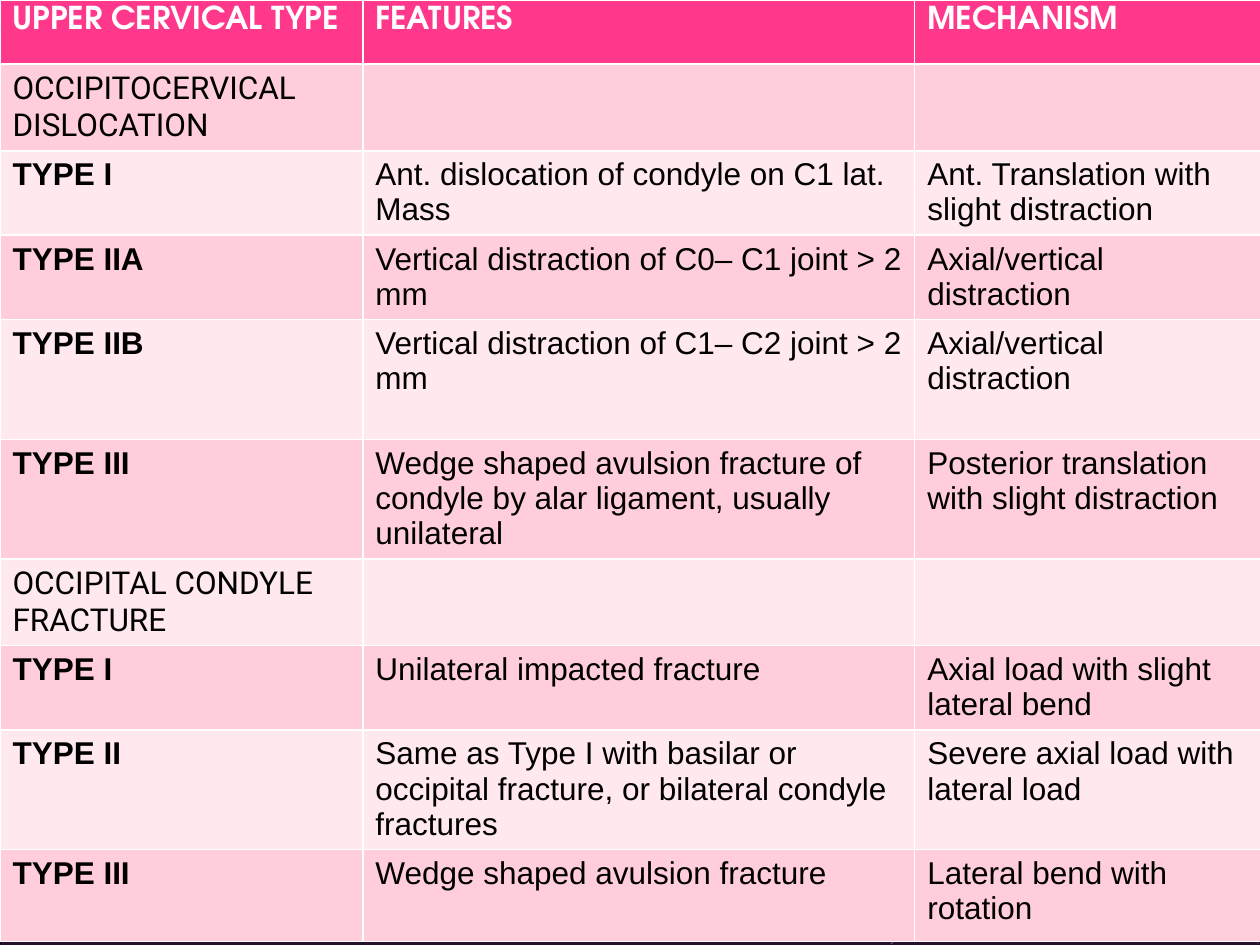
from typing import NamedTuple

from lxml.etree import SubElement
from pptx import Presentation
from pptx.dml.color import RGBColor
from pptx.enum.shapes import MSO_CONNECTOR, MSO_SHAPE
from pptx.oxml.ns import qn
from pptx.util import Pt


class Row(NamedTuple):
    height: float
    label: str
    features: str = ""
    mechanism: str = ""


class Line(NamedTuple):
    start: tuple[float, float]
    end: tuple[float, float]
    width: float
    color: str
    opacity: int


BACKGROUND = "1C0022"
HEADER_FILL = "FF388C"
BAND_FILLS = ("FFE8EE", "FFCEDA")
TWO_LINES, THREE_LINES = 48.24, 68.4
COLUMN_WIDTHS = (207.36, 315.36, 225.36)

HEADER_FORMAT = {"name": "TeX Gyre Adventor", "size": Pt(18), "bold": True}
GROUP_FORMAT = {"name": "Roboto", "size": Pt(18), "bold": False}
LABEL_FORMAT = {"name": "Arial", "size": Pt(18), "bold": True}
BODY_FORMAT = {"name": "Arial", "size": Pt(18), "bold": False}

DECOR_LINES = (
    Line((0, 0.72), (719.28, 539.28), 0.39, "BFBFBF", 35),
    Line((720, 389.52), (509.04, 539.28), 0.47, "C6C6C6", 45),
)

ROWS = (
    Row(36.72, "UPPER CERVICAL TYPE", "FEATURES", "MECHANISM"),
    Row(TWO_LINES, "OCCIPITOCERVICAL DISLOCATION"),
    Row(TWO_LINES, "TYPE I", "Ant. dislocation of condyle on C1 lat. Mass",
        "Ant. Translation with\nslight distraction"),
    Row(TWO_LINES, "TYPE IIA", "Vertical distraction of C0– C1 joint > 2 mm",
        "Axial/vertical\ndistraction"),
    Row(THREE_LINES, "TYPE IIB", "Vertical distraction of C1– C2 joint > 2 mm",
        "Axial/vertical\ndistraction"),
    Row(THREE_LINES, "TYPE III",
        "Wedge shaped avulsion fracture of condyle by alar ligament, usually unilateral",
        "Posterior translation\nwith slight distraction"),
    Row(TWO_LINES, "OCCIPITAL CONDYLE FRACTURE"),
    Row(TWO_LINES, "TYPE I", "Unilateral impacted fracture",
        "Axial load with slight lateral bend"),
    Row(THREE_LINES, "TYPE II",
        "Same as Type I with basilar or occipital fracture, or bilateral condyle fractures",
        "Severe axial load with lateral load"),
    Row(52.56, "TYPE III", "Wedge shaped avulsion fracture",
        "Lateral bend with\nrotation"),
)


def paint(fill, color: str, opacity: int = 100) -> None:
    """Give a fill a solid colour, see-through below 100 percent."""
    fill.solid()
    fill.fore_color.rgb = RGBColor.from_string(color)
    if opacity < 100:
        color_element = fill._xPr.find(qn("a:solidFill"))[0]
        SubElement(color_element, qn("a:alpha")).set("val", str(opacity * 1000))


def draw_line(slide, line: Line) -> None:
    points = [Pt(value) for value in (*line.start, *line.end)]
    connector = slide.shapes.add_connector(MSO_CONNECTOR.STRAIGHT, *points)
    connector.line.width = Pt(line.width)
    paint(connector.line.fill, line.color, line.opacity)
    SubElement(connector._element.spPr, qn("a:effectLst"))


def draw_triangle(slide) -> None:
    triangle = slide.shapes.add_shape(
        MSO_SHAPE.RIGHT_TRIANGLE, Pt(0.72), Pt(1.44), Pt(718.56), Pt(538.56))
    triangle.shadow.inherit = False
    triangle.line.fill.background()
    paint(triangle.fill, "D2D2D2", 8)


def write_cell(cell, text: str, fill: str, text_format: dict, color: str) -> None:
    paint(cell.fill, fill)
    cell.text_frame.text = text
    for paragraph in cell.text_frame.paragraphs:
        for name, value in text_format.items():
            setattr(paragraph.font, name, value)
        paragraph.font.color.rgb = RGBColor.from_string(color)
        for run in paragraph.runs:
            for name, value in text_format.items():
                setattr(run.font, name, value)
            run.font.color.rgb = RGBColor.from_string(color)


def draw_table(slide, rows: tuple[Row, ...]) -> None:
    # The default table style supplies the white rules
    table = slide.shapes.add_table(
        len(rows), len(COLUMN_WIDTHS), 0, 0,
        Pt(sum(COLUMN_WIDTHS)), Pt(sum(row.height for row in rows))).table
    for column, width in zip(table.columns, COLUMN_WIDTHS):
        column.width = Pt(width)
    for row_index, row in enumerate(rows):
        table.rows[row_index].height = Pt(row.height)
        is_header = row_index == 0
        fill = HEADER_FILL if is_header else BAND_FILLS[row_index % 2]
        color = "FFFFFF" if is_header else "000000"
        label_format = LABEL_FORMAT if row.features else GROUP_FORMAT
        formats = (label_format, BODY_FORMAT, BODY_FORMAT)
        if is_header:
            formats = (HEADER_FORMAT,) * 3
        texts = (row.label, row.features, row.mechanism)
        for column_index, (text, text_format) in enumerate(zip(texts, formats)):
            write_cell(table.cell(row_index, column_index), text, fill,
                       text_format, color)


def main() -> None:
    presentation = Presentation()
    presentation.slide_width, presentation.slide_height = Pt(720), Pt(540)
    slide = presentation.slides.add_slide(presentation.slide_layouts[6])

    # Dark background with its faint decoration
    paint(slide.background.fill, BACKGROUND)
    draw_triangle(slide)
    for line in DECOR_LINES:
        draw_line(slide, line)

    # Classification table
    draw_table(slide, ROWS)
    presentation.save("out.pptx")


if __name__ == "__main__":
    main()
